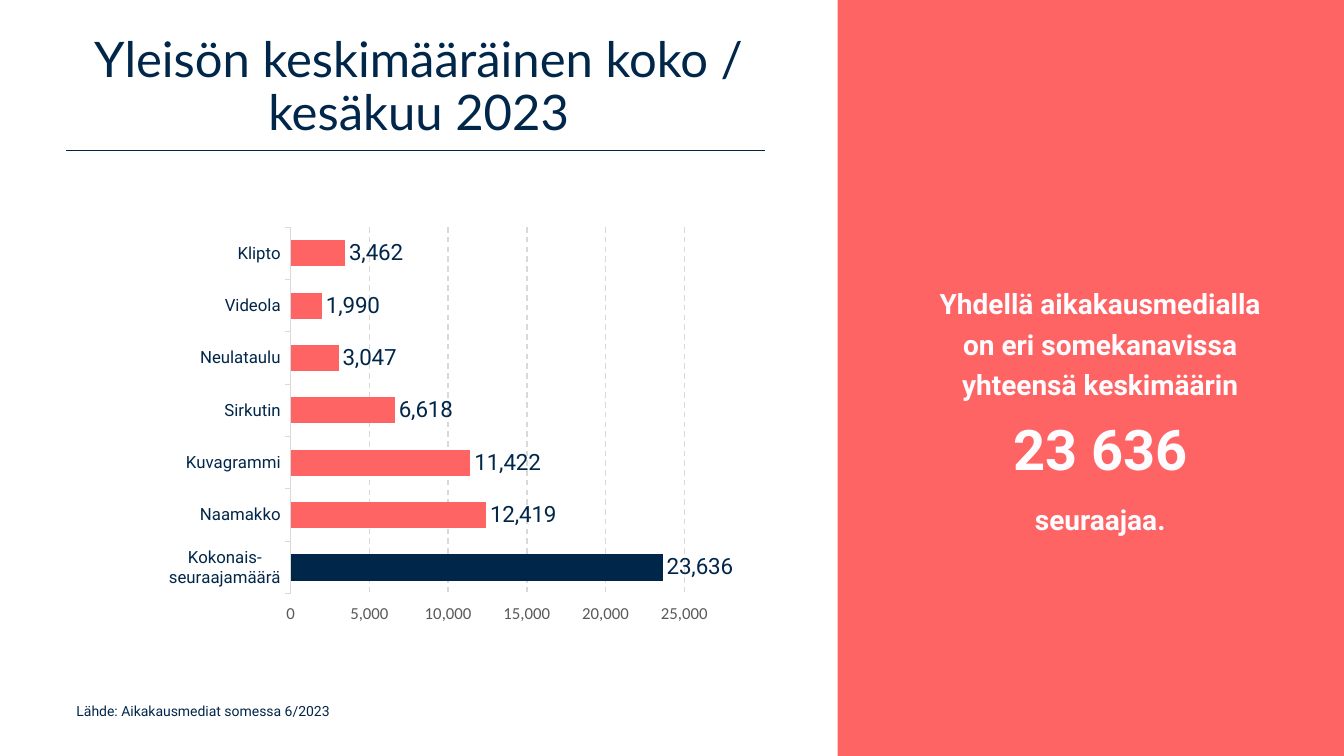
from dataclasses import dataclass

from lxml import etree
from pptx import Presentation
from pptx.chart.data import CategoryChartData
from pptx.dml.color import RGBColor
from pptx.enum.chart import XL_CHART_TYPE, XL_LABEL_POSITION, XL_TICK_MARK
from pptx.enum.dml import MSO_LINE
from pptx.enum.shapes import MSO_CONNECTOR, MSO_SHAPE
from pptx.enum.text import MSO_ANCHOR, MSO_AUTO_SIZE, PP_ALIGN
from pptx.oxml import parse_xml
from pptx.oxml.ns import nsdecls, qn
from pptx.util import Pt

BAR_CLUSTERED = XL_CHART_TYPE.BAR_CLUSTERED
OUTSIDE_END = XL_LABEL_POSITION.OUTSIDE_END
TICK_OUT, TICK_NONE = XL_TICK_MARK.OUTSIDE, XL_TICK_MARK.NONE
DASH = MSO_LINE.DASH
STRAIGHT, RECTANGLE = MSO_CONNECTOR.STRAIGHT, MSO_SHAPE.RECTANGLE
MIDDLE, TOP = MSO_ANCHOR.MIDDLE, MSO_ANCHOR.TOP
NO_FIT = MSO_AUTO_SIZE.NONE
CENTER, LEFT = PP_ALIGN.CENTER, PP_ALIGN.LEFT

COLORS = {
    "coral": "FF6464",
    "navy": "002649",
    "white": "FEFCFF",
    "grid": "D9D9D9",
    "gray": "595959",
}
PAGE_WIDTH, PAGE_HEIGHT = 960, 540
PANEL_LEFT = 598.3


@dataclass
class Span:
    text: str
    size: float
    color: str
    font: str = "Roboto"
    bold: bool = False


@dataclass
class Line:
    spans: list[Span]
    align: PP_ALIGN = CENTER
    spacing: float = 1.0
    before: float = 0


@dataclass
class Channel:
    name: str
    followers: int
    color: str = "coral"


CHANNELS = [
    Channel("Kokonais-\nseuraajamäärä", 23636, "navy"),
    Channel("Naamakko", 12419),
    Channel("Kuvagrammi", 11422),
    Channel("Sirkutin", 6618),
    Channel("Neulataulu", 3047),
    Channel("Videola", 1990),
    Channel("Klipto", 3462),
]


def rgb(name: str) -> RGBColor:
    return RGBColor.from_string(COLORS[name])


def style_font(font, size: float, color: str, face: str = "Roboto") -> None:
    font.size = Pt(size)
    font.name = face
    font.color.rgb = rgb(color)


def place(shape, left: float, top: float, width: float, height: float) -> None:
    shape.left, shape.top = Pt(left), Pt(top)
    shape.width, shape.height = Pt(width), Pt(height)


def write(shape, lines: list[Line], anchor: MSO_ANCHOR = MIDDLE) -> None:
    frame = shape.text_frame
    frame.word_wrap = True
    frame.auto_size = NO_FIT
    frame.vertical_anchor = anchor
    for index, line in enumerate(lines):
        para = frame.paragraphs[0] if index == 0 else frame.add_paragraph()
        para.alignment = line.align
        para.line_spacing = line.spacing
        para.space_before = Pt(line.before)
        for span in line.spans:
            for part, text in enumerate(span.text.split("\n")):
                if part:
                    para.add_line_break()
                if text:
                    run = para.add_run()
                    run.text = text
                    run.font.bold = span.bold
                    style_font(run.font, span.size, span.color, span.font)


def add_text(page, area: tuple, lines: list[Line], anchor: MSO_ANCHOR = MIDDLE) -> None:
    write(page.shapes.add_textbox(*map(Pt, area)), lines, anchor)


def set_plot_area(chart, x: float, y: float, width: float, height: float) -> None:
    plot_area = chart._chartSpace.chart.plotArea
    for old in plot_area.findall(qn("c:layout")):
        plot_area.remove(old)
    layout = parse_xml(f"<c:layout {nsdecls('c')}><c:manualLayout/></c:layout>")
    settings = {"layoutTarget": "inner", "xMode": "edge", "yMode": "edge",
                "x": x, "y": y, "w": width, "h": height}
    for tag, value in settings.items():
        etree.SubElement(layout[0], qn(f"c:{tag}")).set("val", str(value))
    plot_area.insert(0, layout)


def add_followers_chart(page) -> None:
    data = CategoryChartData(number_format="#,##0")
    data.categories = [channel.name for channel in CHANNELS]
    data.add_series("Seuraajat", [channel.followers for channel in CHANNELS])
    area = map(Pt, (0, 135.4, PANEL_LEFT, 312.5))
    chart = page.shapes.add_chart(BAR_CLUSTERED, *area, data).chart
    chart.has_legend = False
    chart.has_title = False
    style_font(chart.font, 12, "navy")
    set_plot_area(chart, 0.347, 0.086, 0.47, 0.838)

    # Bars and their values
    plot = chart.plots[0]
    plot.gap_width = 100
    plot.vary_by_categories = False
    series = plot.series[0]
    series.invert_if_negative = False
    series.format.fill.solid()
    series.format.fill.fore_color.rgb = rgb("coral")
    for index, channel in enumerate(CHANNELS):
        if channel.color != "coral":
            fill = series.points[index].format.fill
            fill.solid()
            fill.fore_color.rgb = rgb(channel.color)
    labels = series.data_labels
    labels.show_value = True
    labels.position = OUTSIDE_END
    labels.number_format = "#,##0"
    labels.number_format_is_linked = False
    style_font(labels.font, 16, "navy")

    # Axes
    names, values = chart.category_axis, chart.value_axis
    for axis in (names, values):
        axis.major_tick_mark = TICK_OUT
        axis.minor_tick_mark = TICK_NONE
    style_font(names.tick_labels.font, 12, "navy")
    names.format.line.color.rgb = rgb("grid")
    names.format.line.width = Pt(0.75)
    style_font(values.tick_labels.font, 12, "gray", "Calibri")
    values.tick_labels.number_format = "#,##0"
    values.tick_labels.number_format_is_linked = False
    values.minimum_scale, values.maximum_scale, values.major_unit = 0, 25000, 5000
    values.format.line.fill.background()
    grid = values.major_gridlines.format.line
    grid.color.rgb = rgb("grid")
    grid.width = Pt(1)
    grid.dash_style = DASH


def main() -> None:
    deck = Presentation()
    deck.slide_width, deck.slide_height = Pt(PAGE_WIDTH), Pt(PAGE_HEIGHT)
    page = deck.slides.add_slide(deck.slide_layouts.get_by_name("Title Only"))

    # Coloured panel
    panel_area = (PANEL_LEFT, 0, PAGE_WIDTH - PANEL_LEFT, PAGE_HEIGHT)
    panel = page.shapes.add_shape(RECTANGLE, *map(Pt, panel_area))
    panel.shadow.inherit = False
    panel.fill.solid()
    panel.fill.fore_color.rgb = rgb("coral")
    panel.line.fill.background()

    # Title and rule
    title = page.shapes.title
    place(title, 0, 18, PANEL_LEFT, 90)
    heading = Span("Yleisön keskimääräinen koko /\nkesäkuu 2023", 35, "navy", "Lato")
    write(title, [Line([heading], spacing=0.9)])
    rule = page.shapes.add_connector(STRAIGHT, *map(Pt, (47.5, 107.3, 546.5, 107.3)))
    rule.line.color.rgb = rgb("navy")
    rule.line.width = Pt(1)
    etree.SubElement(rule._element.spPr, qn("a:effectLst"))

    add_followers_chart(page)

    # Key figure
    message = "Yhdellä aikakausmedialla on eri somekanavissa yhteensä keskimäärin\n"
    add_text(page, (650.9, 108, 270, 367.2), [
        Line([Span(message, 20, "white", bold=True),
              Span("23 636", 40, "white", bold=True)], spacing=1.2),
        Line([Span("seuraajaa.", 20, "white", bold=True)], spacing=1.2, before=10),
    ])

    # Source note
    note = Span("Lähde: Aikakausmediat somessa 6/2023", 10, "navy")
    add_text(page, (47.5, 498.2, 473.8, 31.7), [Line([note], LEFT)], TOP)

    deck.save("out.pptx")


if __name__ == "__main__":
    main()
